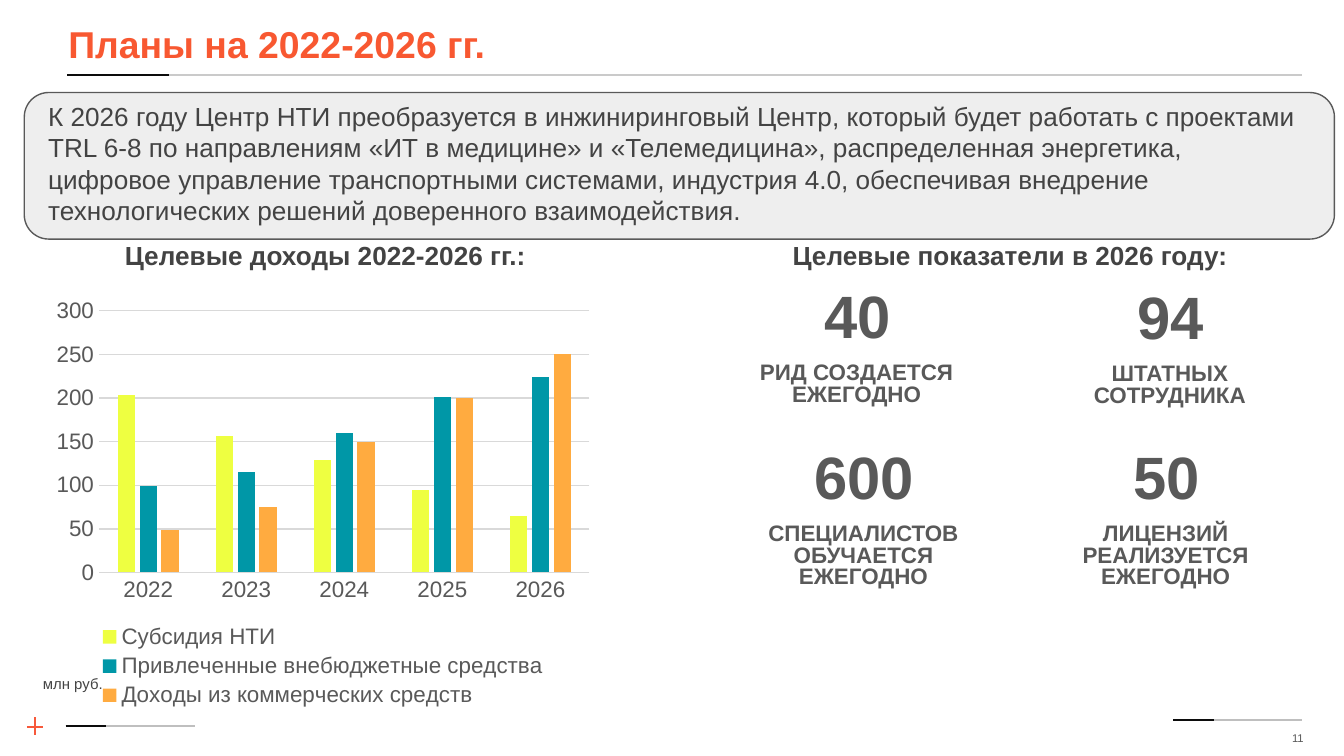
"""Build the slide with the plans for 2022-2026: target income chart and key figures."""
from dataclasses import dataclass

from pptx import Presentation
from pptx import util as u
from pptx.chart import data as chart_data
from pptx.dml.color import RGBColor
from pptx.enum import chart as ch, shapes, text
from pptx.oxml.ns import qn
from lxml import etree

FONT = "Arial"
COLORS = {
    "accent": "F85831", "cross": "F7593B", "text": "434343", "muted": "595959",
    "black": "0C0C0C", "rule": "CACACA", "footer": "BFBFBF", "panel": "EEEEEE",
    "grid": "D9D9D9", "yellow": "EEFF41", "teal": "0097A7", "orange": "FFAB40",
}


@dataclass
class Rule:
    x: float
    y: float
    length: float
    accent: float
    color: str
    width: float


@dataclass
class Metric:
    x: float
    y: float
    value: str
    caption: str
    height: float


@dataclass
class Series:
    name: str
    values: tuple
    color: str


RULES = [
    Rule(1.24, 13.72, 2.44, 0.77, "footer", 0.75),
    Rule(22.17, 13.61, 2.44, 0.77, "footer", 0.75),
    Rule(1.27, 1.42, 23.34, 1.93, "rule", 1),
]
METRICS = [
    Metric(13.79, 5.26, "40", "РИД СОЗДАЕТСЯ ЕЖЕГОДНО", 0.81),
    Metric(19.71, 5.28, "94", "ШТАТНЫХ СОТРУДНИКА", 0.81),
    Metric(13.92, 8.31, "600", "СПЕЦИАЛИСТОВ ОБУЧАЕТСЯ ЕЖЕГОДНО", 1.22),
    Metric(19.63, 8.31, "50", "ЛИЦЕНЗИЙ РЕАЛИЗУЕТСЯ ЕЖЕГОДНО", 1.22),
]
YEARS = ["2022", "2023", "2024", "2025", "2026"]
SERIES = [
    Series("Субсидия НТИ", (204, 157, 129, 94, 65), "yellow"),
    Series("Привлеченные внебюджетные средства", (99, 115, 160, 201, 224), "teal"),
    Series("Доходы из коммерческих средств", (49, 75, 150, 200, 250), "orange"),
]
INTRO = (
    "К 2026 году Центр НТИ преобразуется в инжиниринговый Центр, который будет "
    "работать с проектами TRL 6-8 по направлениям «ИТ в медицине» и «Телемедицина», "
    "распределенная энергетика, цифровое управление транспортными системами, "
    "индустрия 4.0, обеспечивая внедрение технологических решений доверенного "
    "взаимодействия."
)


def rgb(name: str) -> RGBColor:
    return RGBColor.from_string(COLORS[name])


def set_font(font, size: float, color: str, bold: bool = False) -> None:
    font.name, font.size, font.bold = FONT, u.Pt(size), bold
    font.color.rgb = rgb(color)


def place(sp, x: float, y: float, w: float, h: float) -> None:
    sp.left, sp.top, sp.width, sp.height = (u.Cm(v) for v in (x, y, w, h))


def write(sp, content: str, *, size: float, color: str = "text", bold: bool = False,
          align=text.PP_ALIGN.LEFT, anchor=text.MSO_ANCHOR.TOP,
          inset: float = 0.25, spacing: float = 1.0) -> None:
    tf = sp.text_frame
    tf.word_wrap = True
    tf.auto_size = text.MSO_AUTO_SIZE.NONE
    tf.vertical_anchor = anchor
    tf.margin_left = tf.margin_right = tf.margin_top = tf.margin_bottom = u.Cm(inset)
    p = tf.paragraphs[0]
    p.alignment, p.line_spacing = align, spacing
    r = p.add_run()
    r.text = content
    set_font(r.font, size, color, bold)


def add_text(s, box: tuple, content: str, **fmt) -> None:
    write(s.shapes.add_textbox(*(u.Cm(v) for v in box)), content, **fmt)


def add_line(s, x1: float, y1: float, x2: float, y2: float, color: str, width: float) -> None:
    ln = s.shapes.add_connector(shapes.MSO_CONNECTOR.STRAIGHT,
                                *(u.Cm(v) for v in (x1, y1, x2, y2)))
    ln.line.color.rgb = rgb(color)
    ln.line.width = u.Pt(width)
    etree.SubElement(ln._element.spPr, qn("a:effectLst"))


def add_rule(s, rule: Rule) -> None:
    for length, color in ((rule.length, rule.color), (rule.accent, "black")):
        add_line(s, rule.x, rule.y, rule.x + length, rule.y, color, rule.width)


def add_panel(s) -> None:
    sp = s.shapes.add_shape(shapes.MSO_SHAPE.ROUNDED_RECTANGLE, 0, 0, 0, 0)
    place(sp, 0.46, 1.75, 24.76, 2.77)
    sp.shadow.inherit = False
    sp.fill.solid()
    sp.fill.fore_color.rgb = rgb("panel")
    sp.line.color.rgb = rgb("muted")
    sp.line.width = u.Pt(0.75)


def add_metric(s, m: Metric) -> None:
    fmt = dict(color="muted", bold=True, align=text.PP_ALIGN.CENTER, inset=0)
    add_text(s, (m.x + 0.75, m.y, 3.33, 1.37), m.value, size=32,
             anchor=text.MSO_ANCHOR.MIDDLE, **fmt)
    add_text(s, (m.x, m.y + 1.61, 4.8, m.height), m.caption, size=12, spacing=0.8, **fmt)


def add_income_chart(s) -> None:
    cd = chart_data.CategoryChartData()
    cd.categories = YEARS
    for item in SERIES:
        cd.add_series(item.name, item.values)
    box = (u.Cm(v) for v in (0.86, 5.49, 10.49, 7.98))
    chart = s.shapes.add_chart(ch.XL_CHART_TYPE.COLUMN_CLUSTERED, *box, cd).chart
    chart.has_title = False
    chart.font.name, chart.font.size = FONT, u.Pt(10)
    chart.has_legend = True
    chart.legend.position = ch.XL_LEGEND_POSITION.BOTTOM
    chart.legend.include_in_layout = False
    set_font(chart.legend.font, 12, "muted")
    plot = chart.plots[0]
    plot.gap_width, plot.overlap, plot.vary_by_categories = 219, -27, False
    for series, item in zip(plot.series, SERIES):
        series.format.fill.solid()
        series.format.fill.fore_color.rgb = rgb(item.color)
        series.invert_if_negative = False
    for axis in (chart.category_axis, chart.value_axis):
        axis.major_tick_mark = axis.minor_tick_mark = ch.XL_TICK_MARK.NONE
        set_font(axis.tick_labels.font, 12, "muted")
    values = chart.value_axis
    values.minimum_scale, values.maximum_scale, values.major_unit = 0, 300, 50
    values.format.line.fill.background()
    for line in (chart.category_axis.format.line, values.major_gridlines.format.line):
        line.color.rgb = rgb("grid")
        line.width = u.Pt(0.75)


def main() -> None:
    prs = Presentation()
    prs.slide_width, prs.slide_height = u.Cm(25.4), u.Cm(14.29)
    s = prs.slides.add_slide(prs.slide_layouts[5])
    for rule in RULES:
        add_rule(s, rule)
    add_line(s, 0.51, 13.74, 0.81, 13.74, "cross", 0.75)
    add_line(s, 0.66, 13.56, 0.66, 13.89, "cross", 0.75)
    add_panel(s)
    title = s.shapes.title
    place(title, 1.04, 0.15, 20.73, 1.96)
    write(title, "Планы на 2022-2026 гг.", size=20, color="accent", bold=True)
    add_text(s, (0.66, 1.65, 24.26, 2.9), INTRO, size=14)
    for x, heading in ((2.11, "Целевые доходы 2022-2026 гг.:"),
                       (14.73, "Целевые показатели в 2026 году:")):
        add_text(s, (x, 4.27, 8.8, 1.12), heading, size=14, bold=True)
    for metric in METRICS:
        add_metric(s, metric)
    add_text(s, (0.56, 12.5, 12.85, 0.86), "млн руб.", size=8)
    add_income_chart(s)
    add_text(s, (23.52, 13.61, 1.3, 0.69), "11", size=6, color="muted", inset=0.18,
             align=text.PP_ALIGN.RIGHT, anchor=text.MSO_ANCHOR.MIDDLE)
    prs.save("out.pptx")


if __name__ == "__main__":
    main()
